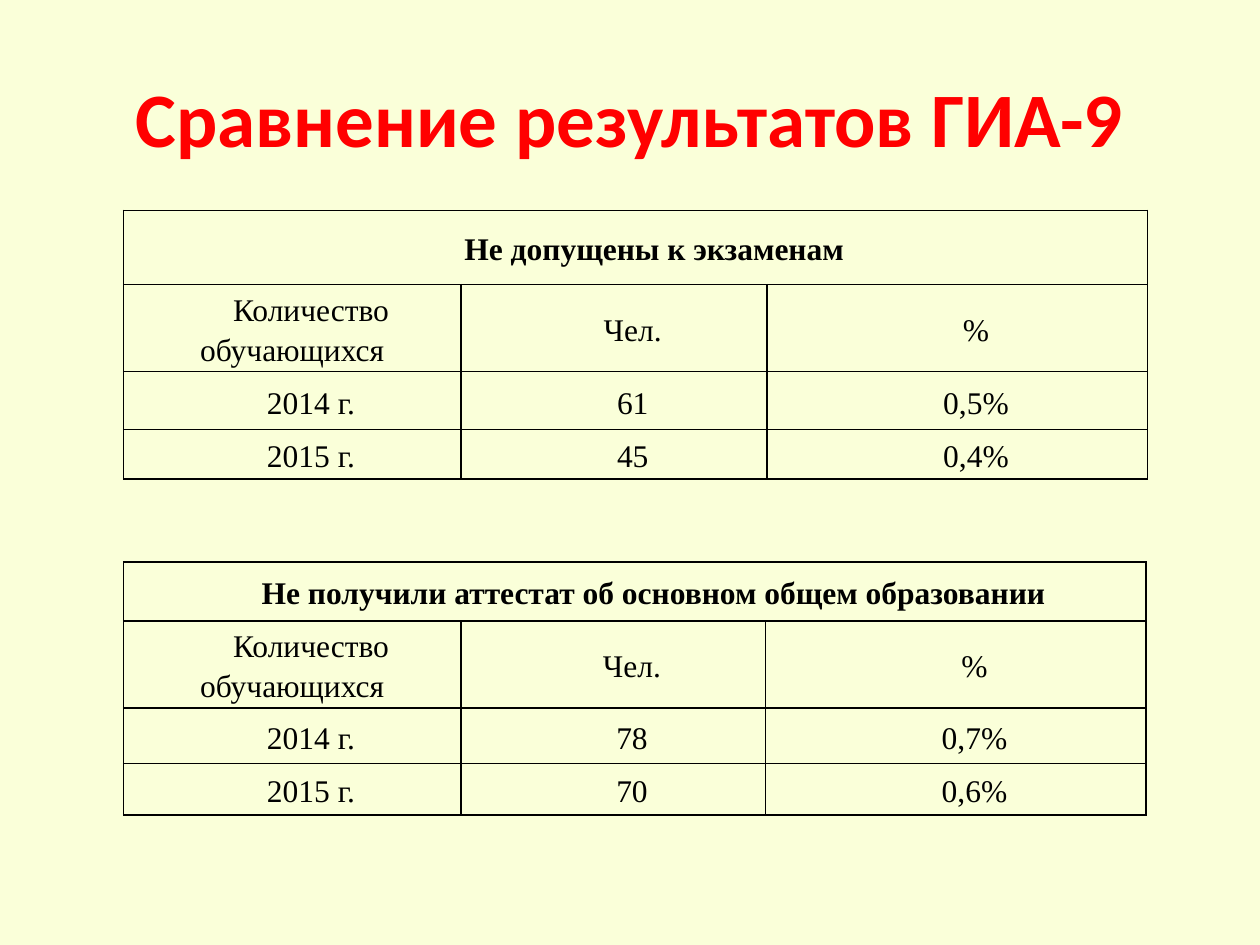
from lxml.etree import SubElement
from pptx import Presentation
from pptx.dml.color import RGBColor
from pptx.enum.text import MSO_ANCHOR, PP_ALIGN
from pptx.oxml.ns import qn
from pptx.util import Cm, Pt

CREAM = RGBColor(0xFA, 0xFF, 0xD9)
RED = RGBColor(0xFF, 0x00, 0x00)
BLACK = RGBColor(0x00, 0x00, 0x00)

COLUMN_HEADINGS = ("Количество обучающихся", "Чел.", "%")
RESULT_TABLES = [
    (
        Cm(4.24), (6.8, 6.17, 7.67), (1.5, 1.62, 1.17, 0.99),
        [
            ("Не допущены к экзаменам", "", ""),
            COLUMN_HEADINGS,
            ("2014 г.", "61", "0,5%"),
            ("2015 г.", "45", "0,4%"),
        ],
    ),
    (
        Cm(11.33), (6.8, 6.14, 7.67), (1.19, 1.62, 1.12, 1.04),
        [
            ("Не получили аттестат об основном общем образовании", "", ""),
            COLUMN_HEADINGS,
            ("2014 г.", "78", "0,7%"),
            ("2015 г.", "70", "0,6%"),
        ],
    ),
]


def add_borders(cell):
    properties = cell._tc.get_or_add_tcPr()
    for side in ("lnL", "lnR", "lnT", "lnB"):
        line = SubElement(properties, qn(f"a:{side}"), w=str(Pt(1)))
        fill = SubElement(line, qn("a:solidFill"))
        SubElement(fill, qn("a:srgbClr"), val=str(BLACK))


presentation = Presentation()
presentation.slide_width = Cm(25.4)
presentation.slide_height = Cm(19.05)
slide = presentation.slides.add_slide(presentation.slide_layouts[6])
slide.background.fill.solid()
slide.background.fill.fore_color.rgb = CREAM

title = slide.shapes.add_textbox(Cm(1.27), Cm(0.76), Cm(22.86), Cm(3.18))
title.text_frame.word_wrap = True
title.text_frame.vertical_anchor = MSO_ANCHOR.MIDDLE
paragraph = title.text_frame.paragraphs[0]
paragraph.text = "Сравнение результатов ГИА-9"
paragraph.alignment = PP_ALIGN.CENTER
paragraph.font.name = "Calibri"
paragraph.font.size = Pt(44)
paragraph.font.bold = True
paragraph.font.color.rgb = RED

for top, column_widths, row_heights, rows in RESULT_TABLES:
    table = slide.shapes.add_table(
        len(rows), len(column_widths), Cm(2.49), top,
        Cm(sum(column_widths)), Cm(sum(row_heights)),
    ).table
    table.horz_banding = False
    for column, width in zip(table.columns, column_widths):
        column.width = Cm(width)
    for row, height in zip(table.rows, row_heights):
        row.height = Cm(height)
    table.cell(0, 0).merge(table.cell(0, 2))

    for row_index, row_texts in enumerate(rows):
        for column_index, text in enumerate(row_texts):
            cell = table.cell(row_index, column_index)
            add_borders(cell)
            cell.fill.background()
            cell.vertical_anchor = MSO_ANCHOR.MIDDLE
            cell.margin_left = cell.margin_right = Cm(0.18)
            cell.margin_top = cell.margin_bottom = Cm(0)
            paragraph = cell.text_frame.paragraphs[0]
            paragraph.text = text
            paragraph.alignment = PP_ALIGN.CENTER
            paragraph.line_spacing = 1.15
            paragraph._p.get_or_add_pPr().set("indent", str(Cm(0.76)))
            paragraph.font.name = "Times New Roman"
            paragraph.font.size = Pt(18)
            paragraph.font.bold = row_index == 0
            paragraph.font.color.rgb = BLACK

presentation.save("out.pptx")
